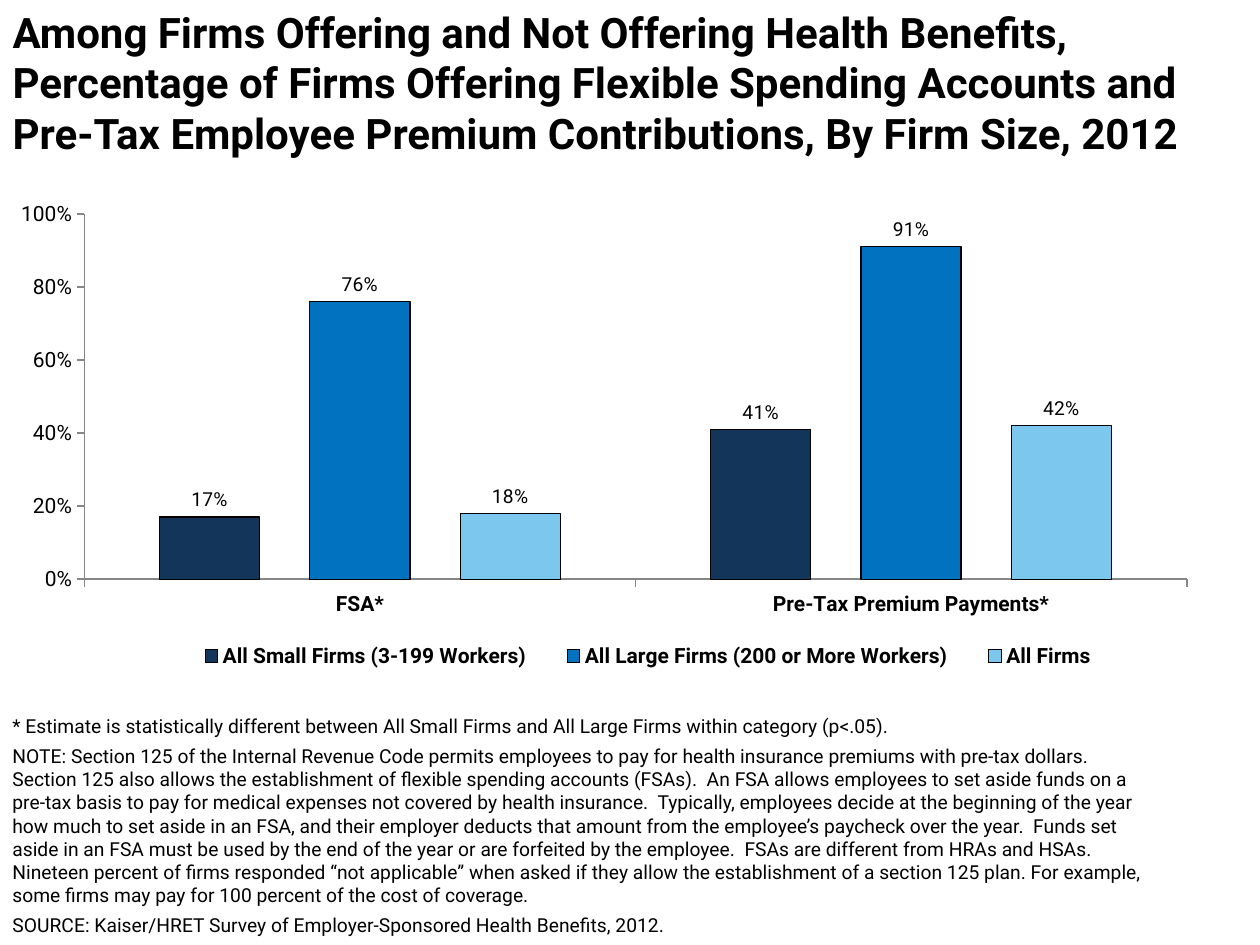
import pptx
import pptx.chart.data
import pptx.dml.color
import pptx.enum.chart
import pptx.enum.text
import pptx.util
from lxml import etree
from pptx.util import Inches

FONT = "Roboto"
PERCENT = '0"%"'


def color(hex_value):
    return pptx.dml.color.RGBColor.from_string(hex_value)


def set_font(font, size, bold=False):
    values = {"name": FONT, "size": pptx.util.Pt(size), "bold": bold}
    for attribute, value in values.items():
        setattr(font, attribute, value)
    font.color.rgb = color("000000")


presentation = pptx.Presentation()
presentation.slide_width = Inches(10)
presentation.slide_height = Inches(7.5)
slide = presentation.slides.add_slide(presentation.slide_layouts[5])

# Title
title = slide.shapes.title
title.left, title.top = Inches(0), Inches(0)
title.width, title.height = Inches(9.83), Inches(1.42)
title.text_frame.text = (
    "Among Firms Offering and Not Offering Health Benefits, "
    "Percentage of Firms Offering Flexible Spending Accounts and\v"
    "Pre-Tax Employee Premium Contributions, By Firm Size, 2012"
)
title.text_frame.word_wrap = True
title.text_frame.auto_size = pptx.enum.text.MSO_AUTO_SIZE.NONE
title.text_frame.vertical_anchor = pptx.enum.text.MSO_ANCHOR.TOP
heading = title.text_frame.paragraphs[0]
heading.alignment = pptx.enum.text.PP_ALIGN.LEFT
for run in heading.runs:
    set_font(run.font, 24, True)

# Offer rates by firm size
firm_sizes = [
    ("All Small Firms (3-199 Workers)", (17, 41), "133559"),
    ("All Large Firms (200 or More Workers)", (76, 91), "0072C0"),
    ("All Firms", (18, 42), "7BC7ED"),
]
offer_rates = pptx.chart.data.CategoryChartData(number_format=PERCENT)
offer_rates.categories = ["FSA*", "Pre-Tax Premium Payments*"]
for name, rates, _ in firm_sizes:
    offer_rates.add_series(name, rates)
chart = slide.shapes.add_chart(
    pptx.enum.chart.XL_CHART_TYPE.COLUMN_CLUSTERED,
    Inches(0.08), Inches(1.58), Inches(9.83), Inches(3.92), offer_rates,
).chart
set_font(chart.font, 10)
chart.has_title = False

plot = chart.plots[0]
plot.gap_width = 150
plot.overlap = -50
plot.vary_by_categories = False
for series, (_, _, fill) in zip(plot.series, firm_sizes):
    series.format.fill.solid()
    series.format.fill.fore_color.rgb = color(fill)
    series.format.line.color.rgb = color("000000")
    series.format.line.width = pptx.util.Pt(0.75)
    labels = series.data_labels
    label_format = {
        "show_value": True,
        "number_format": PERCENT,
        "number_format_is_linked": False,
        "position": pptx.enum.chart.XL_LABEL_POSITION.OUTSIDE_END,
    }
    for attribute, value in label_format.items():
        setattr(labels, attribute, value)
    set_font(labels.font, 11)

for axis, bold in ((chart.category_axis, True), (chart.value_axis, False)):
    set_font(axis.tick_labels.font, 12, bold)
    axis.has_major_gridlines = False
    axis.major_tick_mark = pptx.enum.chart.XL_TICK_MARK.OUTSIDE
    axis.format.line.color.rgb = color("868686")
    axis.format.line.width = pptx.util.Pt(1)
rate_axis = chart.value_axis
rate_axis.minimum_scale, rate_axis.maximum_scale = 0, 100
rate_axis.major_unit = 20
rate_axis.tick_labels.number_format = PERCENT
rate_axis.tick_labels.number_format_is_linked = False

chart.has_legend = True
legend = chart.legend
legend.position = pptx.enum.chart.XL_LEGEND_POSITION.BOTTOM
legend.include_in_layout = False
set_font(legend.font, 12, True)

# Fixed places of plot area and legend, as fractions of the chart
chart_ns = "http://schemas.openxmlformats.org/drawingml/2006/chart"
places = {
    "plotArea": (0.06, 0.03, 0.89, 0.74),
    "legend": (0.13, 0.88, 0.77, 0.09),
}
for part, fractions in places.items():
    area = chart.element.find(f".//{{{chart_ns}}}{part}")
    for old_layout in area.findall(f"{{{chart_ns}}}layout"):
        area.remove(old_layout)
    layout = etree.Element(f"{{{chart_ns}}}layout")
    manual = etree.SubElement(layout, f"{{{chart_ns}}}manualLayout")
    settings = [("xMode", "edge"), ("yMode", "edge")]
    if part == "plotArea":
        settings.insert(0, ("layoutTarget", "inner"))
    settings += zip("xywh", fractions)
    for tag, value in settings:
        etree.SubElement(manual, f"{{{chart_ns}}}{tag}").set("val", str(value))
    area.insert(0 if part == "plotArea" else 1, layout)

# Footnotes
note_sentences = [
    "NOTE: Section 125 of the Internal Revenue Code permits employees to pay for "
    "health insurance premiums with pre-tax dollars.",
    "Section 125 also allows the establishment of flexible spending accounts (FSAs).",
    "An FSA allows employees to set aside funds on a pre-tax basis to pay for "
    "medical expenses not covered by health insurance.",
    "Typically, employees decide at the beginning of the year how much to set aside "
    "in an FSA, and their employer deducts that amount from the employee’s paycheck "
    "over the year.",
    "Funds set aside in an FSA must be used by the end of the year or are forfeited "
    "by the employee.",
    "FSAs are different from HRAs and HSAs.",
    "Nineteen percent of firms responded “not applicable” when asked if they allow "
    "the establishment of a section 125 plan. For example, some firms may pay for "
    "100 percent of the cost of coverage.",
]
footnotes = [
    "* Estimate is statistically different between All Small Firms and All Large "
    "Firms within category (p<.05).",
    "  ".join(note_sentences),
    "SOURCE: Kaiser/HRET Survey of Employer-Sponsored Health Benefits, 2012.",
]
notes_frame = slide.shapes.add_textbox(
    Inches(0), Inches(5.62), Inches(9.25), Inches(1.88)
).text_frame
notes_frame.word_wrap = True
for index, footnote in enumerate(footnotes):
    paragraph = notes_frame.add_paragraph() if index else notes_frame.paragraphs[0]
    paragraph.text = footnote
    if index:
        paragraph.space_before = pptx.util.Pt(4)
    set_font(paragraph.font, 11)

presentation.save("out.pptx")
